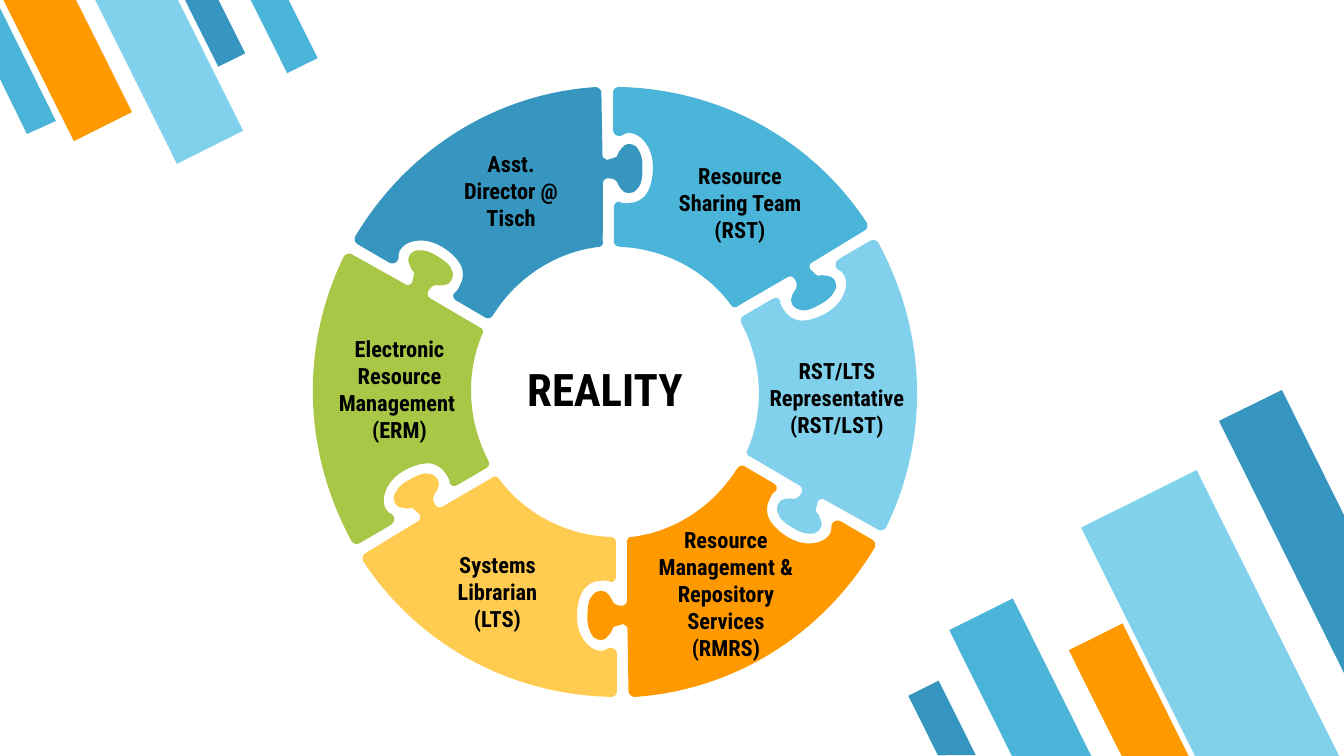
import math
from dataclasses import dataclass

import pptx
import pptx.dml.color
import pptx.enum.shapes
import pptx.enum.text
import pptx.oxml.ns
import pptx.util
import lxml.etree

EMU_PER_PX = 914400 / 134.4
Point = tuple[float, float]
Segment = list[Point]


@dataclass(frozen=True)
class Theme:
    sky: str = "4BB5D9"
    pale: str = "81D1EC"
    orange: str = "FF9900"
    yellow: str = "FFCB50"
    green: str = "A9C747"
    blue: str = "3796BF"
    ink: str = "000000"
    font: str = "Roboto Condensed"
    label_size: int = 12
    title_size: int = 24


@dataclass(frozen=True)
class Box:
    left: int
    top: int
    width: int
    height: int


@dataclass(frozen=True)
class Bar:
    box: Box
    color: str
    rotation: float


@dataclass(frozen=True)
class CutBar:
    corners: list[Point]
    color: str


@dataclass(frozen=True)
class Label:
    box: Box
    text: str


THEME = Theme()
RISING, FALLING = 153.5, 333.5

# Slanted bars in the two corners; the cut ones stop at the slide edge
BARS = [
    Bar(Box(985, 605, 71, 177), THEME.sky, RISING),
    Bar(Box(1146, 482, 129, 321), THEME.pale, RISING),
    Bar(Box(1099, 629, 60, 149), THEME.orange, RISING),
    Bar(Box(925, 684, 34, 83), THEME.blue, RISING),
    Bar(Box(200, -11, 30, 75), THEME.blue, FALLING),
    Bar(Box(35, -24, 65, 159), THEME.orange, FALLING),
    Bar(Box(132, -27, 74, 184), THEME.pale, FALLING),
    Bar(Box(267, -13, 34, 83), THEME.sky, FALLING),
]
CUT_BARS = [
    CutBar([(1282, 390), (1219, 421), (1344, 673), (1344, 515)], THEME.blue),
    CutBar([(27, 134), (56, 121), (0, 8), (0, 79)], THEME.sky),
]

# Puzzle ring: the top right piece, repeated every 60 degrees clockwise
RING_CENTER = (615, 392)
RING_ASPECT = 0.99  # width against height
PIECE_COLORS = [THEME.sky, THEME.pale, THEME.orange, THEME.yellow, THEME.green, THEME.blue]
PIECE_START = (629, 133)
# One point is a straight line, three points are a Bezier curve
PIECE_SEGMENTS = [
    # socket
    [(634, 133), (640, 136), (644, 141)],
    [(650, 148), (653, 157), (653, 168)],
    [(653, 179), (650, 190), (645, 196)],
    [(641, 200), (636, 203), (630, 203)],
    [(628, 204), (625, 203), (622, 203)],
    [(618, 200), (614, 203), (614, 207)],
    # inner arc
    [(614, 242)],
    [(614, 245), (617, 247), (621, 247)],
    [(665, 249), (706, 271), (731, 305)],
    [(732, 308), (737, 308), (738, 306)],
    # knob
    [(788, 277)],
    [(790, 276), (792, 276), (794, 278)],
    [(796, 281), (798, 285), (796, 289)],
    [(794, 292), (793, 293), (792, 296)],
    [(789, 301), (793, 309), (800, 310)],
    [(806, 312), (814, 308), (821, 304)],
    [(827, 301), (833, 296), (836, 288)],
    [(837, 281), (833, 276), (827, 276)],
    [(824, 274), (821, 276), (818, 276)],
    [(814, 274), (813, 271), (810, 269)],
    [(809, 266), (810, 263), (813, 262)],
    # outer arc
    [(864, 231)],
    [(867, 230), (868, 226), (867, 223)],
    [(813, 141), (722, 89), (618, 87)],
    [(616, 87), (613, 89), (613, 93)],
    [(613, 130)],
    [(613, 134), (617, 137), (621, 136)],
    [(624, 134), (626, 133), (629, 133)],
]

LABELS = [
    Label(Box(439, 144, 144, 95), "Asst. Director @ Tisch"),
    Label(Box(664, 156, 152, 95), "Resource Sharing Team\n(RST)"),
    Label(Box(740, 351, 194, 95), "RST/LTS Representative\n(RST/LST)"),
    Label(Box(311, 329, 177, 126), "Electronic\nResource Management \n(ERM)"),
    Label(Box(625, 520, 202, 149), "Resource Management & Repository Services\n(RMRS)"),
    Label(Box(409, 545, 177, 95), "Systems Librarian\n(LTS)"),
]
TITLE = Label(Box(508, 355, 194, 67), "REALITY")


def px(length: float) -> pptx.util.Emu:
    return pptx.util.Emu(round(length * EMU_PER_PX))


def place(box: Box) -> tuple:
    return px(box.left), px(box.top), px(box.width), px(box.height)


def paint(shape, color: str) -> None:
    shape.shadow.inherit = False
    shape.fill.solid()
    shape.fill.fore_color.rgb = pptx.dml.color.RGBColor.from_string(color)
    shape.line.fill.background()


def draw_bar(slide, bar: Bar) -> None:
    kind = pptx.enum.shapes.MSO_SHAPE.FLOWCHART_MANUAL_INPUT
    shape = slide.shapes.add_shape(kind, *place(bar.box))
    shape.rotation = bar.rotation
    shape._element.spPr.xfrm.set("flipH", "1")
    paint(shape, bar.color)


def draw_outline(slide, start: Point, segments: list[Segment], color: str) -> None:
    points = [(px(x), px(y)) for segment in segments for x, y in segment]
    builder = slide.shapes.build_freeform(px(start[0]), px(start[1]))
    builder.add_line_segments(points, close=True)
    shape = builder.convert_to_shape()
    # Join each run of three points into one Bezier curve
    lines = iter(list(shape._element.iter(pptx.oxml.ns.qn("a:lnTo"))))
    for segment in segments:
        first, *others = [next(lines) for _ in segment]
        if others:
            curve = lxml.etree.Element(pptx.oxml.ns.qn("a:cubicBezTo"))
            first.addprevious(curve)
            for line in (first, *others):
                curve.append(line[0])
                line.getparent().remove(line)
    paint(shape, color)


def turn(point: Point, degrees: float) -> Point:
    """Move a point clockwise along the slightly narrow ring."""
    angle = math.radians(degrees)
    x = (point[0] - RING_CENTER[0]) / RING_ASPECT
    y = point[1] - RING_CENTER[1]
    return (RING_CENTER[0] + RING_ASPECT * (x * math.cos(angle) - y * math.sin(angle)),
            RING_CENTER[1] + x * math.sin(angle) + y * math.cos(angle))


def add_text(slide, text: str, *, box: Box, size: int, bold: bool = True,
             color: str = THEME.ink, font: str = THEME.font) -> None:
    frame = slide.shapes.add_textbox(*place(box)).text_frame
    frame.word_wrap = True
    frame.auto_size = pptx.enum.text.MSO_AUTO_SIZE.SHAPE_TO_FIT_TEXT
    frame.text = text
    for paragraph in frame.paragraphs:
        paragraph.alignment = pptx.enum.text.PP_ALIGN.CENTER
        for run in paragraph.runs:
            run.font.name = font
            run.font.size = pptx.util.Pt(size)
            run.font.bold = bold
            run.font.color.rgb = pptx.dml.color.RGBColor.from_string(color)


def main() -> None:
    presentation = pptx.Presentation()
    presentation.slide_width, presentation.slide_height = px(1344), px(756)
    slide = presentation.slides.add_slide(presentation.slide_layouts[6])

    # Corner decoration
    for bar in BARS:
        draw_bar(slide, bar)
    for cut_bar in CUT_BARS:
        start, *corners = cut_bar.corners
        draw_outline(slide, start, [[corner] for corner in corners], cut_bar.color)

    # Puzzle ring
    for index, color in enumerate(PIECE_COLORS):
        degrees = index * 360 / len(PIECE_COLORS)
        segments = [[turn(point, degrees) for point in segment] for segment in PIECE_SEGMENTS]
        draw_outline(slide, turn(PIECE_START, degrees), segments, color)

    # Texts
    for label in LABELS:
        add_text(slide, label.text, box=label.box, size=THEME.label_size)
    add_text(slide, TITLE.text, box=TITLE.box, size=THEME.title_size)

    presentation.save("out.pptx")


if __name__ == "__main__":
    main()
